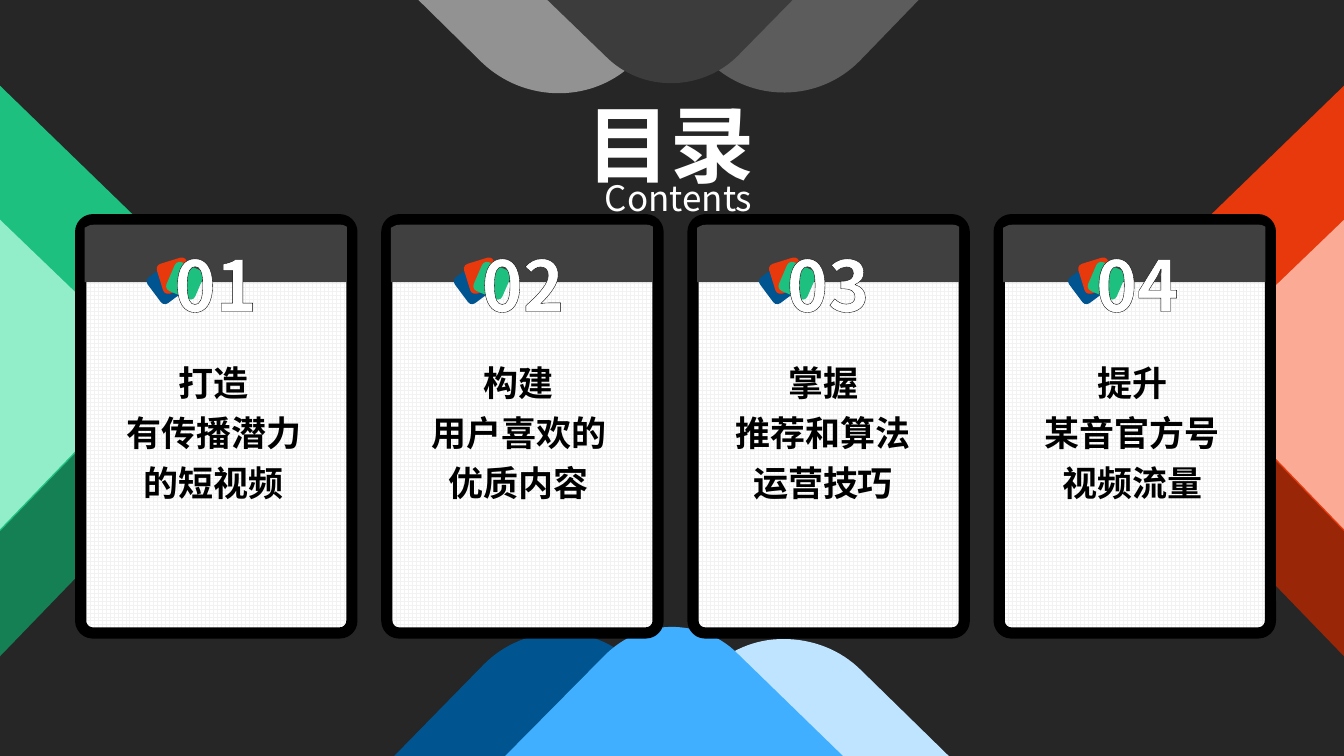
from math import cos, radians, sin

from lxml import etree
from pptx import Presentation
from pptx import util as u
from pptx.dml.color import RGBColor
from pptx.enum import dml, shapes, text
from pptx.oxml.ns import qn

FONT = "Noto Sans CJK SC"
WIDE, HIGH = 13.33, 7.5
HEX = {
    "back": "262626", "white": "FFFFFF", "black": "000000", "grid": "F2F2F2",
    "head": "404040", "grey": "3C3C3C", "mid": "5C5C5C", "pale": "929292",
    "blue": "005490", "sky": "40AFFF", "ice": "BFE4FF",
    "rust": "9A2608", "red": "E7390C", "pink": "FAAA95",
    "pine": "148054", "green": "1EC07F", "mint": "91EEC8",
}

# A pair is a corner; six numbers are a Bezier curve from the point before.
SIDES = [
    [(0, 1.41), (1.69, 3.05), (2.16, 3.51, 2.18, 4.26, 1.72, 4.73), (0, 6.51)],
    [(0, 0.85), (1.33, 2.14), (1.81, 2.6, 1.82, 3.38, 1.36, 3.86), (0, 5.27)],
    [(0, 2.18), (0.78, 2.93), (1.19, 3.34, 1.21, 4, 0.8, 4.42), (0, 5.25)],
]
TOP = [
    ("mid", [(6.41, 0), (9.11, 0), (8.53, 0.6),
             (8.12, 1.02, 7.45, 1.02, 7.04, 0.62)]),
    ("pale", [(4.15, 0), (6.9, 0), (6.31, 0.6),
              (5.9, 1.03, 5.21, 1.03, 4.78, 0.62)]),
    ("grey", [(5.43, 0), (7.86, 0), (7.32, 0.55),
              (6.96, 0.91, 6.37, 0.92, 6.01, 0.56)]),
]
FOOT = [
    ("blue", [(5.54, 6.28), (5.81, 6.27, 6.08, 6.37, 6.29, 6.58), (7.23, 7.5),
              (3.91, 7.5), (4.8, 6.59), (5, 6.39, 5.27, 6.28, 5.54, 6.28)]),
    ("ice", [(7.77, 6.34), (8.05, 6.34, 8.33, 6.44, 8.54, 6.65), (9.41, 7.5),
             (6.19, 7.5), (7.01, 6.67), (7.22, 6.45, 7.49, 6.34, 7.77, 6.34)]),
    ("sky", [(6.66, 6.22), (6.89, 6.22, 7.13, 6.3, 7.31, 6.48), (8.36, 7.5),
             (5.01, 7.5), (6, 6.5), (6.18, 6.32, 6.42, 6.22, 6.66, 6.22)]),
]
BAND = [(0.13, 0.05), (2.58, 0.05), (2.59, 0.05, 2.61, 0.05, 2.62, 0.06),
        (2.64, 0.07), (2.64, 0.62), (0.04, 0.62), (0.04, 0.08), (0.08, 0.06),
        (0.09, 0.05, 0.11, 0.05, 0.13, 0.05)]
# Number, lines of text, and the small shifts of number and text
CARDS = [
    ("01", "打造\n有传播潜力\n的短视频", 0, 0),
    ("02", "构建\n用户喜欢的\n优质内容", 0.01, -0.01),
    ("03", "掌握\n推荐和算法\n运营技巧", 0, -0.03),
    ("04", "提升\n某音官方号\n视频流量", 0.03, 0),
]
# Left, top, width, height, turn and colour of each tile beside a number
TILES = [
    (0.69, 0.49, 0.32, 0.3, 53.4, "blue"),
    (0.78, 0.4, 0.31, 0.31, 342.8, "red"),
    (0.88, 0.45, 0.31, 0.31, 23.3, "green"),
]


def rgb(name):
    return RGBColor.from_string(HEX[name])


def paint(shape, name):
    shape.shadow.inherit = False
    shape.fill.solid()
    shape.fill.fore_color.rgb = rgb(name)
    shape.line.fill.background()


def weave(fill, kind):
    """Give a fill a faint pattern on white."""
    fill.patterned()
    fill.pattern = kind
    fill.fore_color.rgb = rgb("grid")
    fill.back_color.rgb = rgb("white")


def spin(x, y, turn):
    """Turn a point clockwise about the slide's top left corner."""
    c, s = cos(radians(turn)), sin(radians(turn))
    return x * c - y * s, x * s + y * c


def petal(slide, path, name, turn=0, left=0, top=0, sign=1):
    """Draw an outline in a turned frame; sign -1 mirrors it."""
    parts = []
    for part in path:
        pairs = zip(part[::2], part[1::2])
        parts.append([tuple(map(u.Inches, spin(left + sign * x, top + y, -turn)))
                      for x, y in pairs])
    ends = [part[-1] for part in parts]
    pen = slide.shapes.build_freeform(*ends[0])
    pen.add_line_segments(ends[1:], close=True)
    shape = pen.convert_to_shape()
    for part, line in zip(parts[1:], list(shape._element.iter(qn("a:lnTo")))):
        if len(part) == 3:
            curve = etree.Element(qn("a:cubicBezTo"))
            for x, y in part:
                etree.SubElement(curve, qn("a:pt"), x=str(x - shape.left),
                                 y=str(y - shape.top))
            line.getparent().replace(line, curve)
    mid = spin(shape.left + shape.width / 2, shape.top + shape.height / 2, turn)
    shape.left = round(mid[0] - shape.width / 2)
    shape.top = round(mid[1] - shape.height / 2)
    shape.rotation = turn
    paint(shape, name)


def decor(slide):
    for edge, sign, turn, names in ((WIDE, -1, 136, ("rust", "red", "pink")),
                                    (0, 1, 224, ("pine", "green", "mint"))):
        for path, name in zip(SIDES, names):
            petal(slide, path, name, turn, edge, 0, sign)
    for turn, group in ((224.4, TOP), (44.4, FOOT)):
        for name, path in group:
            petal(slide, path, name, turn)


def place(shape, left, top, width, height):
    shape.left, shape.top = u.Inches(left), u.Inches(top)
    shape.width, shape.height = u.Inches(width), u.Inches(height)


def write(shape, words, size, space, bold=True, name="white", wrap=True,
          pads=(0.1, 0.05, 0.1, 0.05), align=text.PP_ALIGN.LEFT):
    frame = shape.text_frame
    frame.text = words
    frame.word_wrap = wrap
    frame.auto_size = text.MSO_AUTO_SIZE.SHAPE_TO_FIT_TEXT
    frame.vertical_anchor = text.MSO_ANCHOR.TOP
    frame.margin_left, frame.margin_top, frame.margin_right, frame.margin_bottom = map(
        u.Inches, pads)
    for para in frame.paragraphs:
        para.alignment, para.line_spacing = align, space
        para.space_before = u.Pt(0)
        for run in para.runs:
            font = run.font
            font.size, font.bold, font.name = u.Pt(size), bold, FONT
            font.color.rgb = rgb(name)
            east = etree.SubElement(run._r.get_or_add_rPr(), qn("a:ea"))
            east.set("typeface", FONT)


def label(slide, box, words, size, space, **look):
    shape = slide.shapes.add_textbox(*map(u.Inches, box))
    write(shape, words, size, space, **look)
    return shape


def rim(run):
    """Outline the letters in black."""
    line = etree.Element(qn("a:ln"), w=str(u.Pt(2.25)))
    fill = etree.SubElement(line, qn("a:solidFill"))
    etree.SubElement(fill, qn("a:srgbClr"), val=HEX["black"])
    run._r.get_or_add_rPr().insert(0, line)


def panel(slide, left, top, width, height):
    shape = slide.shapes.add_shape(shapes.MSO_SHAPE.ROUNDED_RECTANGLE,
                                   *map(u.Inches, (left, top, width, height)))
    shape.adjustments[0] = 0.045
    shape.shadow.inherit = False
    weave(shape.fill, dml.MSO_PATTERN.LARGE_GRID)
    shape.line.color.rgb = rgb("black")
    shape.line.width = u.Pt(8)
    petal(slide, BAND, "head", 0, left, top)


def topic(slide, left, top, number, words, shift, nudge):
    for x, y, w, h, turn, name in TILES:
        tile = slide.shapes.add_shape(
            shapes.MSO_SHAPE.ROUNDED_RECTANGLE,
            *map(u.Inches, (left + x + shift, top + y, w, h)))
        tile.rotation = turn
        paint(tile, name)
    digits = label(slide, (left + 0.93 + shift, top - 0.2, 0.87, 1.11), number,
                   50, 1.5, wrap=False, pads=(0, 0, 0, 0))
    run = digits.text_frame.paragraphs[0].runs[0]
    weave(run.font.fill, dml.MSO_PATTERN.WIDE_UPWARD_DIAGONAL)
    rim(run)
    label(slide, (left + 0.34 + nudge, top + 1.27, 1.96, 1.57), words, 25, 1.2,
          name="black", wrap=False, align=text.PP_ALIGN.CENTER)


def heading(slide, left, top):
    title = slide.shapes.title
    place(title, left, top, 1.69, 1.39)
    write(title, "目录", 60, 1.5, pads=(0, 0, 0, 0.06))
    label(slide, (left + 0.07, top + 1.07, 1.71, 0.68), "Contents", 25, 1.5,
          bold=False, pads=(0.11, 0.05, 0.11, 0.05))


def main():
    deck = Presentation()
    deck.slide_width, deck.slide_height = u.Inches(WIDE), u.Inches(HIGH)
    slide = deck.slides.add_slide(deck.slide_layouts[5])
    slide.background.fill.solid()
    slide.background.fill.fore_color.rgb = rgb("back")
    decor(slide)
    first, last, top = 0.8, 9.91, 2.18
    pitch = (last - first) / (len(CARDS) - 1)
    lefts = [first + i * pitch for i in range(len(CARDS))]
    for left in lefts:
        panel(slide, left, top, 2.69, 4.1)
    heading(slide, 5.82, 0.42)
    for left, parts in zip(lefts, CARDS):
        topic(slide, left, top, *parts)
    deck.save("out.pptx")


if __name__ == "__main__":
    main()
